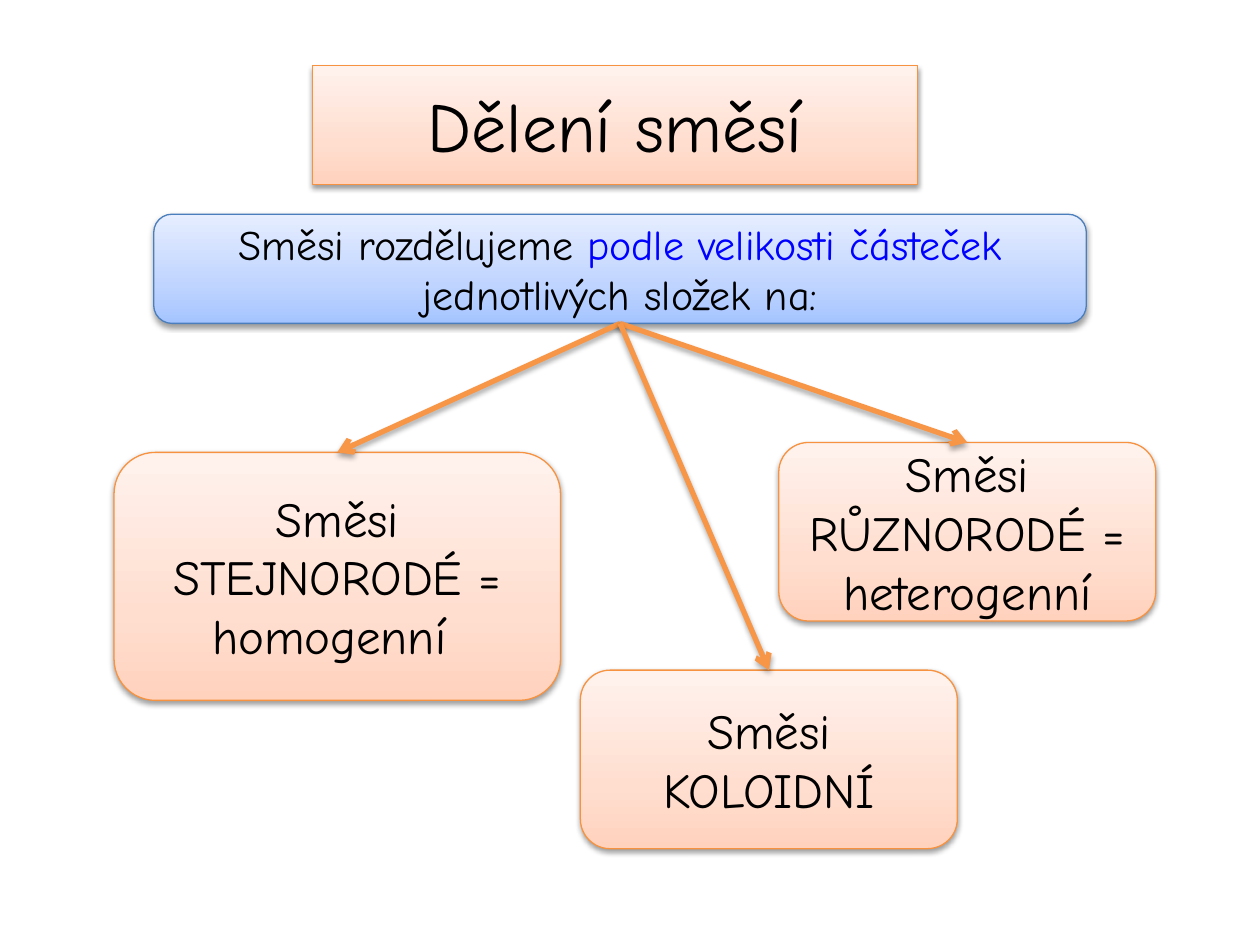
"""Build a slide that shows how mixtures are divided by particle size."""
from lxml.etree import SubElement
from pptx import Presentation
from pptx.dml.color import RGBColor
from pptx.enum.shapes import MSO_CONNECTOR, MSO_SHAPE
from pptx.enum.text import MSO_ANCHOR, MSO_AUTO_SIZE, PP_ALIGN
from pptx.oxml.ns import qn
from pptx.util import Cm, Pt

BLACK = RGBColor(0x00, 0x00, 0x00)
BLUE = RGBColor(0x00, 0x00, 0xFF)
ARROW_ORANGE = RGBColor(0xF7, 0x96, 0x46)
ORANGE_STYLE = {
    "stops": ("FFD2BD", "FFDED0", "FFF2ED"),
    "line": RGBColor(0xF6, 0x92, 0x40),
}
BLUE_STYLE = {
    "stops": ("A4C4FF", "BFD4FF", "E6EEFF"),
    "line": RGBColor(0x4B, 0x7E, 0xBC),
}
STOP_POSITIONS = (0, 35, 100)
FONT_NAME = "Comic Neue"

TITLE = {
    "runs": [("Dělení směsí", BLACK)],
    "box": (6.3, 1.32, 12.2, 2.4), "size": 40, "style": ORANGE_STYLE,
}
INTRODUCTION = {
    "runs": [
        ("Směsi rozdělujeme ", BLACK),
        ("podle velikosti částeček ", BLUE),
        ("jednotlivých složek na:", BLACK),
    ],
    "box": (3.1, 4.32, 18.8, 2.2), "size": 24, "style": BLUE_STYLE,
}
MIXTURES = [
    ("Směsi STEJNORODÉ = homogenní ", (2.3, 9.12, 9, 5)),
    ("Směsi RŮZNORODÉ = heterogenní", (15.7, 8.92, 7.6, 3.6)),
    ("Směsi KOLOIDNÍ", (11.7, 13.51, 7.6, 3.6)),
]


def add_element(parent, tag, **attributes):
    values = {name: str(value) for name, value in attributes.items()}
    return SubElement(parent, qn(tag), values)


def add_shadow(properties, distance, opacity):
    effects = add_element(properties, "a:effectLst")
    shadow = add_element(effects, "a:outerShdw", blurRad=40000, dist=distance,
                         dir=5400000, rotWithShape=0)
    color = add_element(shadow, "a:srgbClr", val="000000")
    add_element(color, "a:alpha", val=opacity * 1000)


def set_gradient(properties, colors):
    gradient = add_element(properties, "a:gradFill", rotWithShape=1)
    stops = add_element(gradient, "a:gsLst")
    for position, color in zip(STOP_POSITIONS, colors):
        stop = add_element(stops, "a:gs", pos=position * 1000)
        add_element(stop, "a:srgbClr", val=color)
    add_element(gradient, "a:lin", ang=16200000, scaled=0)


def write_text(shape, runs, size):
    frame = shape.text_frame
    frame_format = {"word_wrap": True, "auto_size": MSO_AUTO_SIZE.NONE,
                    "vertical_anchor": MSO_ANCHOR.MIDDLE}
    for name, value in frame_format.items():
        setattr(frame, name, value)
    paragraph = frame.paragraphs[0]
    paragraph.alignment = PP_ALIGN.CENTER
    for text, color in runs:
        run = paragraph.add_run()
        run.text = text
        for name, value in {"name": FONT_NAME, "size": Pt(size)}.items():
            setattr(run.font, name, value)
        run.font.color.rgb = color


def format_box(shape, runs, size, style):
    properties = shape._element.spPr
    set_gradient(properties, style["stops"])
    shape.line.color.rgb = style["line"]
    shape.line.width = Pt(0.75)
    add_shadow(properties, 20000, 38)
    write_text(shape, runs, size)


def add_title(slide, runs, box, size, style):
    title = slide.shapes.title
    for name, value in zip(("left", "top", "width", "height"), box):
        setattr(title, name, Cm(value))
    geometry = add_element(title._element.spPr, "a:prstGeom", prst="roundRect")
    add_element(geometry, "a:avLst")
    format_box(title, runs, size, style)


def add_box(slide, runs, box, size, style):
    shape = slide.shapes.add_shape(MSO_SHAPE.ROUNDED_RECTANGLE, *map(Cm, box))
    format_box(shape, runs, size, style)
    return shape


def add_arrow(slide, source, target):
    arrow = slide.shapes.add_connector(MSO_CONNECTOR.STRAIGHT, 0, 0, 0, 0)
    arrow.begin_connect(source, 2)
    arrow.end_connect(target, 0)
    arrow.line.color.rgb = ARROW_ORANGE
    arrow.line.width = Pt(3)
    add_element(arrow.line._get_or_add_ln(), "a:tailEnd", type="arrow")
    add_shadow(arrow._element.spPr, 23000, 35)


def main():
    presentation = Presentation()
    presentation.slide_width = Cm(25.4)
    presentation.slide_height = Cm(19.05)
    slide = presentation.slides.add_slide(presentation.slide_layouts[5])
    add_title(slide, **TITLE)
    introduction = add_box(slide, **INTRODUCTION)
    for text, box in MIXTURES:
        mixture = add_box(slide, [(text, BLACK)], box, 28, ORANGE_STYLE)
        add_arrow(slide, introduction, mixture)
    presentation.save("out.pptx")


if __name__ == "__main__":
    main()
